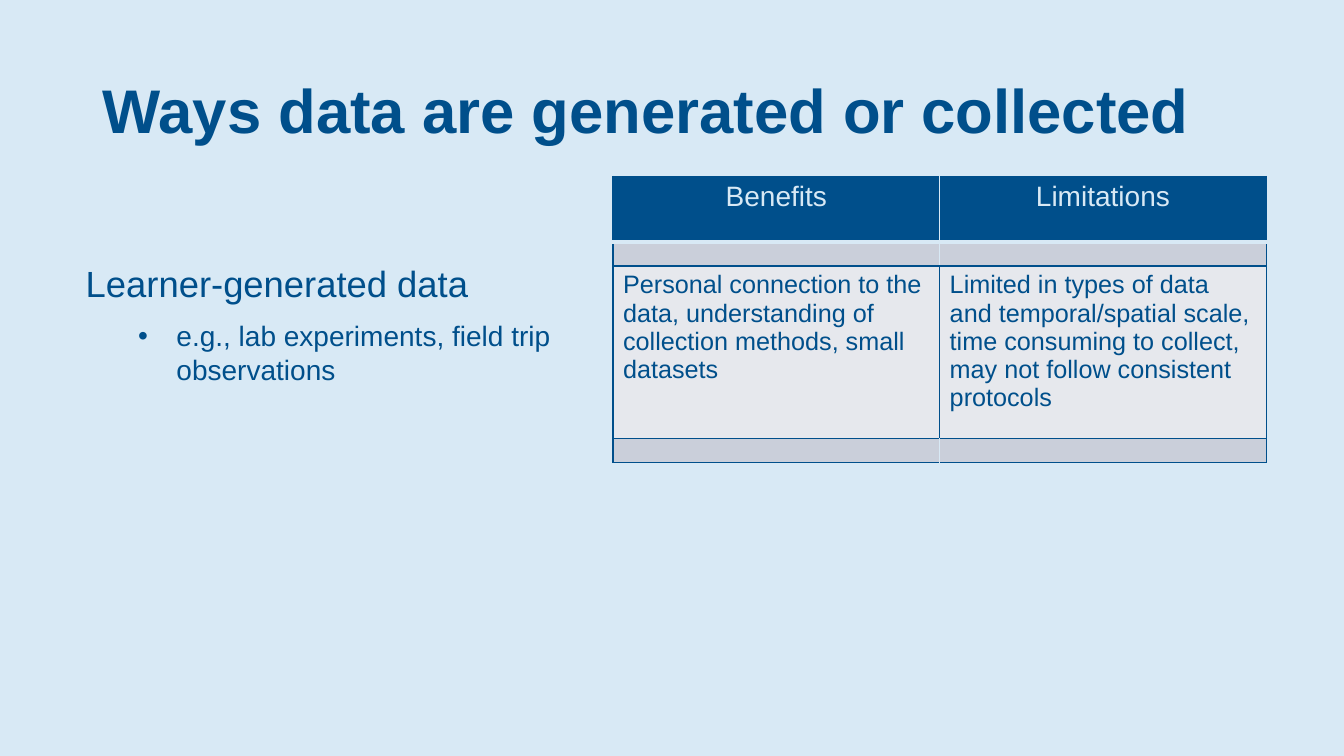
from lxml import etree
from pptx import Presentation
from pptx.dml.color import RGBColor
from pptx.enum.text import MSO_ANCHOR, MSO_AUTO_SIZE, PP_ALIGN
from pptx.oxml.ns import qn
from pptx.util import Inches, Pt

LEFT, CENTER = PP_ALIGN.LEFT, PP_ALIGN.CENTER
TOP, MIDDLE = MSO_ANCHOR.TOP, MSO_ANCHOR.MIDDLE
NO_FIT = MSO_AUTO_SIZE.NONE

COLORS = {"navy": "004F8B", "pale": "D8E9F5", "band": "CACFDA", "cell": "E6E8ED"}
HEADER, BODY = 0, 2
ROW_HEIGHTS = [0.65, 0.24, 1.71, 0.24]
ROW_FILLS = ["navy", "band", "cell", "band"]
CELL_TEXT = {
    HEADER: ["Benefits", "Limitations"],
    BODY: ["Personal connection to the data, understanding of collection methods, "
           "small datasets",
           "Limited in types of data and temporal/spatial scale, time consuming to "
           "collect, may not follow consistent protocols"],
}
CELL_FORMATS = {
    HEADER: {"size": 20, "color": "pale", "align": CENTER},
    BODY: {"size": 18, "color": "navy", "align": LEFT},
}


def rgb(name):
    return RGBColor.from_string(COLORS[name])


def add_run(p, text, size, color="navy", bold=False):
    r = p.add_run()
    r.text = text
    for key, value in {"name": "Arial", "size": Pt(size), "bold": bold}.items():
        setattr(r.font, key, value)
    r.font.color.rgb = rgb(color)


def place(sp, box, anchor):
    for key, value in zip(("left", "top", "width", "height"), box):
        setattr(sp, key, Inches(value))
    tf = sp.text_frame
    tf.word_wrap = True
    tf.auto_size = NO_FIT
    tf.vertical_anchor = anchor
    return tf


def fill_title(sp, box):
    p = place(sp, box, MIDDLE).paragraphs[0]
    p.alignment = LEFT
    p.line_spacing = 0.9
    add_run(p, "Ways data are generated or collected", 44, bold=True)


def set_indent(p, margin, indent):
    pPr = p._p.get_or_add_pPr()
    pPr.set("marL", str(Inches(margin)))
    pPr.set("indent", str(Inches(indent)))
    return pPr


def fill_body(sp, box):
    tf = place(sp, box, TOP)
    p = tf.paragraphs[0]
    etree.SubElement(set_indent(p, 0.1, 0), qn("a:buNone"))
    p.space_before = Pt(0)
    add_run(p, "Learner-generated data", 26)

    p = tf.add_paragraph()
    p.level = 1
    pPr = set_indent(p, 1, -0.38)
    clr = etree.SubElement(pPr, qn("a:buClr"))
    etree.SubElement(clr, qn("a:srgbClr"), val=COLORS["navy"])
    etree.SubElement(pPr, qn("a:buFont"), typeface="Arial")
    etree.SubElement(pPr, qn("a:buChar"), char="•")
    p.space_before = Pt(10)
    add_run(p, "e.g., lab experiments, field trip observations", 20)


def cell_borders(row, col):
    """Navy grid, with pale inner verticals and a thick pale rule under the header."""
    inner = ("navy" if row == BODY else "pale", 1)
    navy, rule = ("navy", 1), ("pale", 3)
    return {
        "lnL": inner if col else navy,
        "lnR": navy if col else inner,
        "lnT": rule if row == HEADER + 1 else navy,
        "lnB": rule if row == HEADER else navy,
    }


def format_cell(cell, row, col):
    tcPr = cell._tc.get_or_add_tcPr()
    for tag, (color, width) in cell_borders(row, col).items():
        ln = etree.SubElement(tcPr, qn("a:" + tag), w=str(Pt(width)))
        fill = etree.SubElement(ln, qn("a:solidFill"))
        etree.SubElement(fill, qn("a:srgbClr"), val=COLORS[color])
    cell.fill.solid()
    cell.fill.fore_color.rgb = rgb(ROW_FILLS[row])

    p = cell.text_frame.paragraphs[0]
    if row in CELL_TEXT:
        fmt = CELL_FORMATS[row]
        p.alignment = fmt["align"]
        add_run(p, CELL_TEXT[row][col], fmt["size"], fmt["color"])
    else:
        cell.margin_top = cell.margin_bottom = 0
        etree.SubElement(p._p, qn("a:endParaRPr"), sz="800")


def add_comparison(s, left, top, width):
    table = s.shapes.add_table(len(ROW_HEIGHTS), 2, Inches(left), Inches(top),
                               Inches(width), Inches(sum(ROW_HEIGHTS))).table
    table.first_row = table.horz_banding = False
    for row, height in enumerate(ROW_HEIGHTS):
        table.rows[row].height = Inches(height)
        for col in range(2):
            format_cell(table.cell(row, col), row, col)


def main():
    prs = Presentation()
    prs.slide_width, prs.slide_height = Inches(13.33), Inches(7.5)
    s = prs.slides.add_slide(prs.slide_layouts[1])
    s.background.fill.solid()
    s.background.fill.fore_color.rgb = rgb("pale")
    fill_title(s.shapes.title, (0.92, 0.4, 11.5, 1.45))
    fill_body(s.placeholders[1], (0.65, 2.54, 5.43, 4.3))
    add_comparison(s, 6.08, 1.75, 6.48)
    prs.save("out.pptx")


if __name__ == "__main__":
    main()
